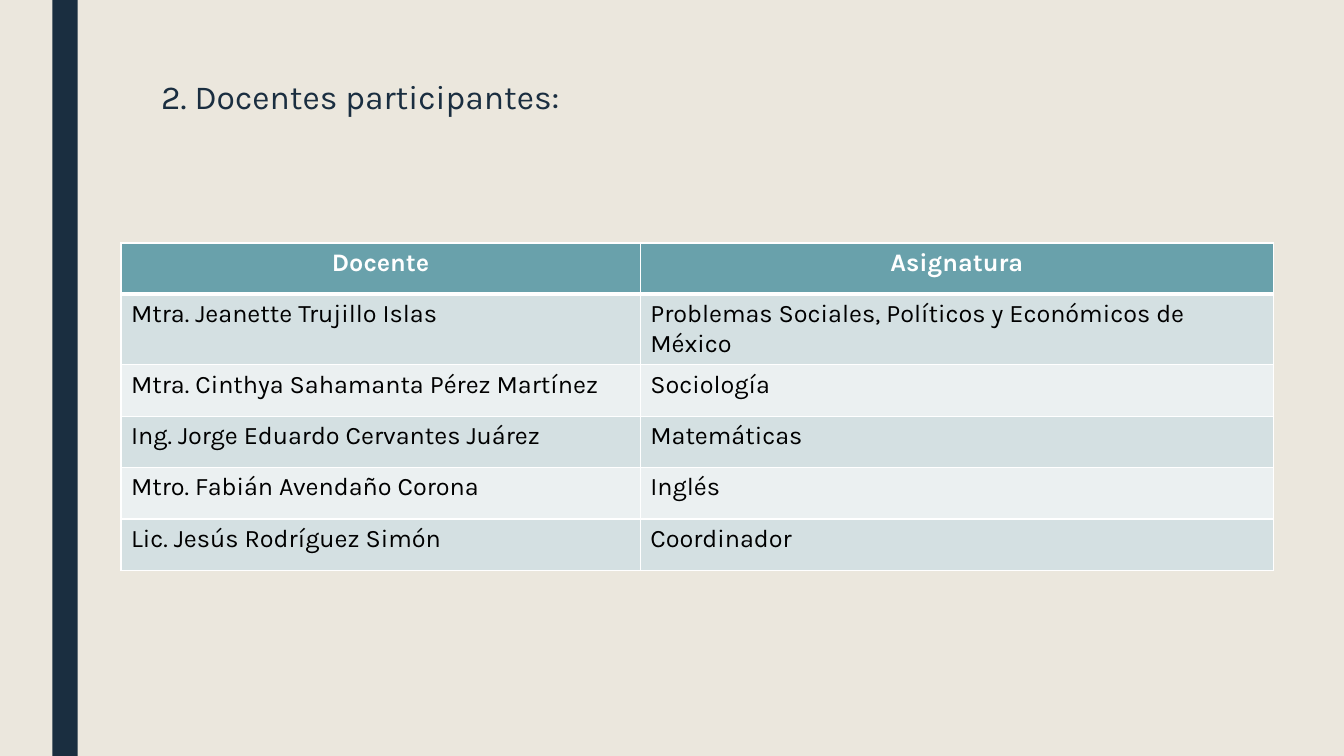
from dataclasses import dataclass
from typing import NamedTuple

from lxml.etree import SubElement
from pptx import Presentation
from pptx.dml.color import RGBColor
from pptx.enum.shapes import MSO_SHAPE
from pptx.enum.text import MSO_ANCHOR, PP_ALIGN
from pptx.oxml.ns import qn
from pptx.slide import Slide
from pptx.table import _Cell
from pptx.text.text import TextFrame
from pptx.util import Inches, Pt


@dataclass(frozen=True)
class Theme:
    font: str = "Karla"
    background: str = "EBE7DD"
    navy: str = "1A2E40"
    header: str = "69A1AB"
    bands: tuple[str, str] = ("D4E0E2", "EBF0F1")
    white: str = "FFFFFF"
    black: str = "000000"
    title_size: int = 24
    table_size: int = 18
    thin_border: int = 1
    thick_border: int = 3


class Teacher(NamedTuple):
    name: str
    subject: str


THEME = Theme()
HEADINGS = Teacher("Docente", "Asignatura")
TEACHERS = [
    Teacher("Mtra. Jeanette Trujillo Islas", "Problemas Sociales, Políticos y Económicos de México"),
    Teacher("Mtra. Cinthya Sahamanta Pérez Martínez", "Sociología"),
    Teacher("Ing. Jorge Eduardo Cervantes Juárez", "Matemáticas"),
    Teacher("Mtro. Fabián Avendaño Corona", "Inglés"),
    Teacher("Lic. Jesús Rodríguez Simón", "Coordinador"),
]
COLUMN_WIDTHS = (5.15, 6.28)
ROW_HEIGHT = 0.51


def write_text(
    frame: TextFrame,
    text: str,
    *,
    size: int,
    color: str,
    bold: bool = False,
    align: PP_ALIGN = PP_ALIGN.LEFT,
    line_spacing: float = 1.0,
) -> None:
    frame.word_wrap = True
    paragraph = frame.paragraphs[0]
    paragraph.alignment = align
    paragraph.line_spacing = line_spacing
    run = paragraph.add_run()
    run.text = text
    run.font.name = THEME.font
    run.font.size = Pt(size)
    run.font.bold = bold
    run.font.color.rgb = RGBColor.from_string(color)


def set_borders(cell: _Cell, top: int, bottom: int) -> None:
    properties = cell._tc.get_or_add_tcPr()
    widths = {"a:lnL": THEME.thin_border, "a:lnR": THEME.thin_border, "a:lnT": top, "a:lnB": bottom}
    for tag, width in widths.items():
        border = SubElement(properties, qn(tag), w=str(Pt(width)))
        border_fill = SubElement(border, qn("a:solidFill"))
        SubElement(border_fill, qn("a:srgbClr"), val=THEME.white)


def draw_side_bar(slide: Slide) -> None:
    side_bar = slide.shapes.add_shape(
        MSO_SHAPE.RECTANGLE, Inches(0.52), Inches(0), Inches(0.25), Inches(7.5)
    )
    side_bar.shadow.inherit = False
    side_bar.fill.solid()
    side_bar.fill.fore_color.rgb = RGBColor.from_string(THEME.navy)
    side_bar.line.fill.background()


def draw_title(slide: Slide) -> None:
    title = slide.shapes.add_textbox(Inches(1.5), Inches(0.75), Inches(10.5), Inches(1.62))
    write_text(
        title.text_frame,
        "2. Docentes participantes:",
        size=THEME.title_size,
        color=THEME.navy,
        line_spacing=0.89,
    )


def draw_teachers(slide: Slide) -> None:
    rows = [HEADINGS, *TEACHERS]
    teachers = slide.shapes.add_table(
        len(rows),
        len(COLUMN_WIDTHS),
        Inches(1.2),
        Inches(2.41),
        Inches(sum(COLUMN_WIDTHS)),
        Inches(ROW_HEIGHT * len(rows)),
    ).table
    for column, width in zip(teachers.columns, COLUMN_WIDTHS):
        column.width = Inches(width)
    for row_index, row in enumerate(rows):
        is_header = row_index == 0
        for column_index, text in enumerate(row):
            cell = teachers.cell(row_index, column_index)
            cell.vertical_anchor = MSO_ANCHOR.TOP
            set_borders(
                cell,
                top=THEME.thick_border if row_index == 1 else THEME.thin_border,
                bottom=THEME.thick_border if is_header else THEME.thin_border,
            )
            cell.fill.solid()
            cell.fill.fore_color.rgb = RGBColor.from_string(
                THEME.header if is_header else THEME.bands[(row_index - 1) % 2]
            )
            write_text(
                cell.text_frame,
                text,
                size=THEME.table_size,
                color=THEME.white if is_header else THEME.black,
                bold=is_header,
                align=PP_ALIGN.CENTER if is_header else PP_ALIGN.LEFT,
            )


def main() -> None:
    presentation = Presentation()
    presentation.slide_width = Inches(13.33)
    presentation.slide_height = Inches(7.5)
    slide = presentation.slides.add_slide(presentation.slide_layouts[6])
    slide.background.fill.solid()
    slide.background.fill.fore_color.rgb = RGBColor.from_string(THEME.background)
    draw_side_bar(slide)
    draw_title(slide)
    draw_teachers(slide)
    presentation.save("out.pptx")


if __name__ == "__main__":
    main()
